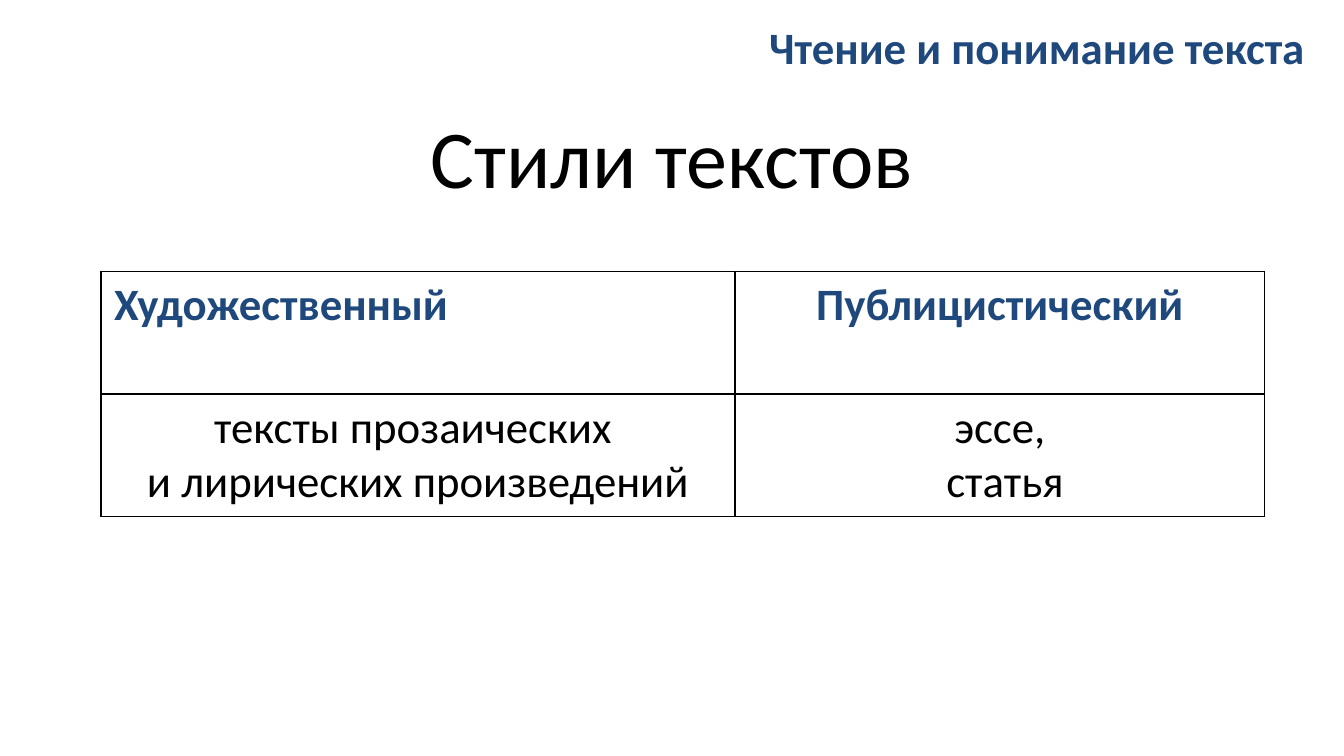
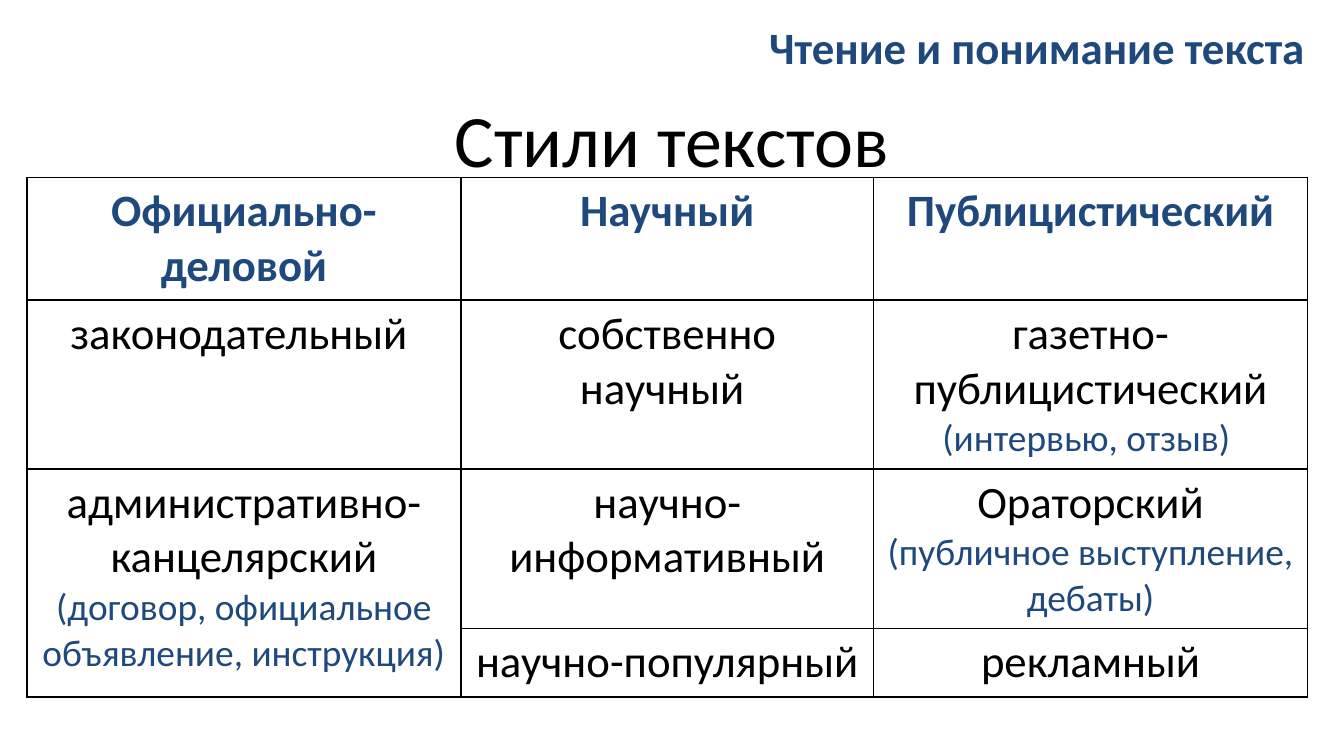
from lxml.etree import SubElement
from pptx import Presentation
from pptx.dml.color import RGBColor
from pptx.enum.shapes import MSO_SHAPE
from pptx.enum.text import MSO_ANCHOR, MSO_AUTO_SIZE, PP_ALIGN
from pptx.oxml.ns import qn
from pptx.util import Inches, Pt

COLORS = {"text": "000000", "accent": "1F497D", "paper": "FFFFFF", "border": "000000"}
FONT = "Calibri"
HEADING = {"bold": True, "color": "accent"}
NOTE = {"size": 20, "color": "accent"}


def rgb(name):
    return RGBColor.from_string(COLORS[name])


def add_text(paragraph, text, size=24, color="text", bold=False, align=PP_ALIGN.CENTER):
    paragraph.alignment = align
    run = paragraph.add_run()
    run.text = text
    run.font.name = FONT
    run.font.size = Pt(size)
    run.font.bold = bold
    run.font.color.rgb = rgb(color)


def set_borders(cell):
    properties = cell._tc.get_or_add_tcPr()
    for side in ("a:lnL", "a:lnR", "a:lnT", "a:lnB"):
        line = SubElement(properties, qn(side), w=str(Pt(1)))
        fill = SubElement(line, qn("a:solidFill"))
        SubElement(fill, qn("a:srgbClr"), val=COLORS["border"])


class Deck:
    def __init__(self):
        self.presentation = Presentation()
        self.presentation.slide_width = Inches(10)
        self.presentation.slide_height = Inches(10 * 9 / 16)
        self.slide = None

    def add_slide(self, title, top, height, size):
        self.slide = self.presentation.slides.add_slide(self.presentation.slide_layouts[5])
        shape = self.slide.shapes.title
        shape.left, shape.top = Inches(0.5), Inches(top)
        shape.width, shape.height = Inches(9), Inches(height)
        frame = shape.text_frame
        frame.auto_size = MSO_AUTO_SIZE.NONE
        frame.vertical_anchor = MSO_ANCHOR.MIDDLE
        add_text(frame.paragraphs[0], title, size=size)

    def add_section_label(self, text):
        shape = self.slide.shapes.add_shape(
            MSO_SHAPE.RECTANGLE, Inches(5.43), 0, Inches(4.57), Inches(0.69))
        shape.shadow.inherit = False
        shape.fill.solid()
        shape.fill.fore_color.rgb = rgb("paper")
        shape.line.color.rgb = rgb("paper")
        shape.line.width = Pt(2)
        shape.text_frame.vertical_anchor = MSO_ANCHOR.MIDDLE
        add_text(shape.text_frame.paragraphs[0], text, **HEADING)

    def add_table(self, left, top, widths, heights, rows):
        """Each cell is a list of paragraphs, each a list of (text, format) runs."""
        table = self.slide.shapes.add_table(
            len(heights), len(widths), Inches(left), Inches(top),
            Inches(sum(widths)), Inches(sum(heights))).table
        table.first_row = table.horz_banding = False
        for column, width in zip(table.columns, widths):
            column.width = Inches(width)
        for row, height in zip(table.rows, heights):
            row.height = Inches(height)
        for row, contents in zip(table.rows, rows):
            for cell, paragraphs in zip(row.cells, contents):
                set_borders(cell)
                cell.fill.solid()
                cell.fill.fore_color.rgb = rgb("paper")
                frame = cell.text_frame
                for index, runs in enumerate(paragraphs):
                    paragraph = frame.add_paragraph() if index else frame.paragraphs[0]
                    for text, style in runs:
                        add_text(paragraph, text, **style)
        return table


def heading(text, **style):
    return [[(text, {**HEADING, **style})]]


def plain(*lines, note=None):
    """Cell with one paragraph per line and an optional smaller note below."""
    paragraphs = [[(line, {})] for line in lines]
    return paragraphs + [[(note, NOTE)]] if note else paragraphs


def main():
    deck = Deck()
    title = "Стили текстов"
    section = "Чтение и понимание текста"

    deck.add_slide(title, top=0.69, height=0.94, size=44)
    deck.add_table(0.75, 2.02, [4.72, 3.94], [0.91, 0.91], [
        [heading("Художественный", align=PP_ALIGN.LEFT), heading("Публицистический")],
        [plain("тексты прозаических ", "и лирических произведений"),
         plain("эссе,", " статья")],
    ])
    deck.add_section_label(section)

    deck.add_slide(title, top=0.23, height=1.6, size=39.6)
    table = deck.add_table(0.2, 1.32, [3.23, 3.07, 3.23], [0.91, 1.25, 1.19, 0.5], [
        [heading("Официально-деловой"), heading("Научный"), heading("Публицистический")],
        [plain("законодательный "), plain("собственно научный "),
         [[("газетно-публицистический ", {}), ("(интервью, отзыв) ", NOTE)]]],
        [plain("административно-канцелярский",
               note="(договор, официальное объявление, инструкция) "),
         plain("научно-информативный"),
         plain("Ораторский", note="(публичное выступление, дебаты)")],
        [[], plain("научно-популярный"), plain("рекламный")],
    ])
    table.cell(2, 0).merge(table.cell(3, 0))
    deck.add_section_label(section)

    deck.presentation.save("out.pptx")


if __name__ == "__main__":
    main()
